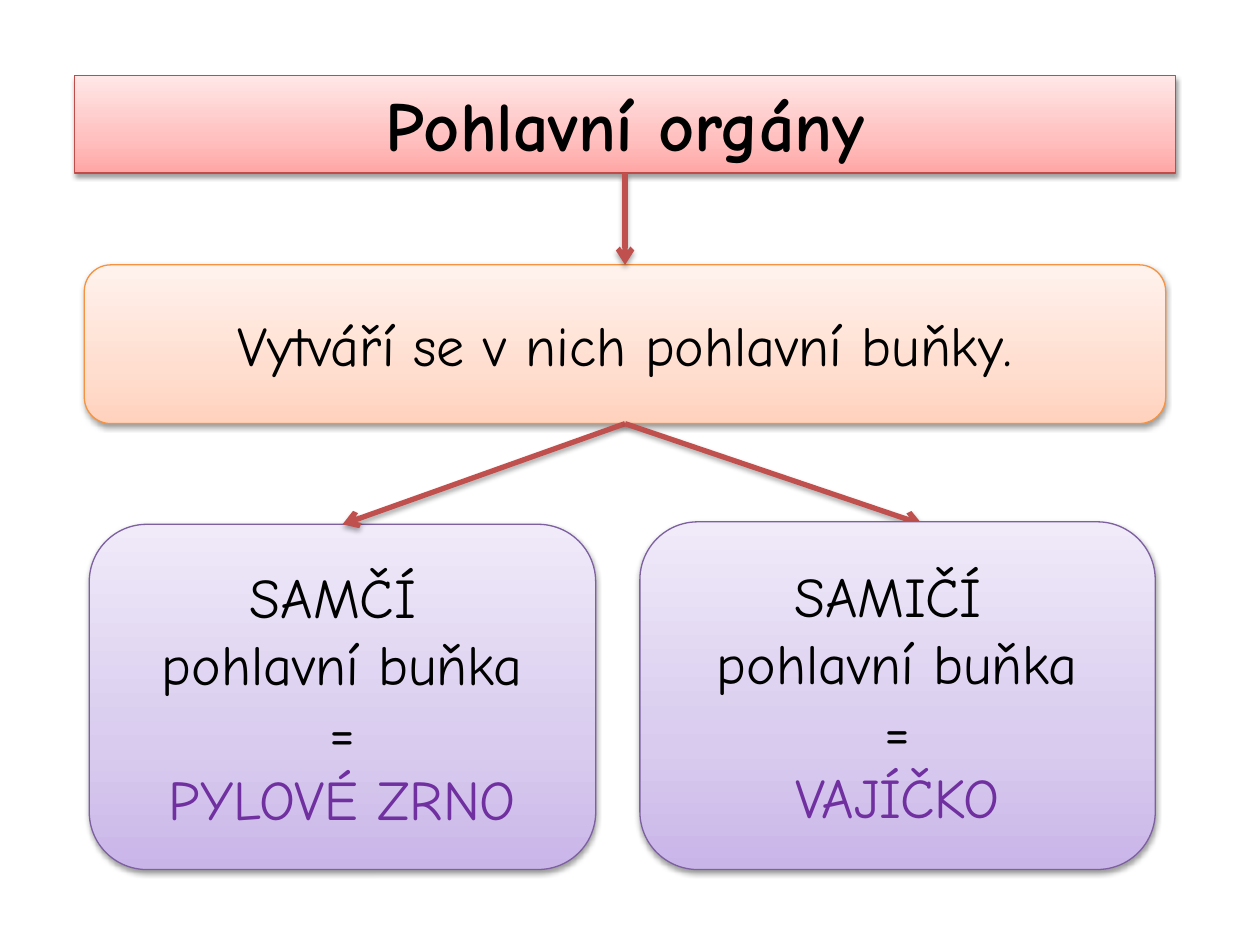
import copy

import pptx
import pptx.dml.color
import pptx.enum.shapes
import pptx.enum.text
import pptx.oxml
import pptx.oxml.ns
import pptx.util
from pptx.util import Cm

SHAPES = pptx.enum.shapes.MSO_SHAPE
ANCHORS = pptx.enum.text.MSO_ANCHOR
FONT = "Comic Neue"
BLACK, VIOLET, ARROW_RED = "000000", "7030A0", "C0504D"
TOP, BOTTOM = 0, 2

# Gradient colours run from the bottom edge to the top edge
STOP_POSITIONS = (0, 0.35, 1)
RED = {"stops": ("FFA6A5", "FFC0BF", "FFE7E7"), "line": "BF4C48"}
ORANGE = {"stops": ("FFD2BD", "FFDED0", "FFF2ED"), "line": "F69240"}
PURPLE = {"stops": ("C9B5E8", "D8CBEE", "F0EAF9"), "line": "7D60A0"}


def rgb(value):
    return pptx.dml.color.RGBColor.from_string(value)


def set_attributes(target, values):
    for name, value in values.items():
        setattr(target, name, value)


def add_shadow(shape, distance, opacity):
    """Add a soft shadow straight below; distance in points, opacity in percent."""
    shape._element.spPr.append(pptx.oxml.parse_xml(
        f'<a:effectLst {pptx.oxml.ns.nsdecls("a")}>'
        f'<a:outerShdw blurRad="{pptx.util.Pt(3.1)}" dist="{pptx.util.Pt(distance)}"'
        ' dir="5400000" rotWithShape="0">'
        f'<a:srgbClr val="000000"><a:alpha val="{opacity * 1000}"/></a:srgbClr>'
        '</a:outerShdw></a:effectLst>'))


def fill_gradient(shape, colors):
    shape.fill.gradient()
    shape.fill.gradient_angle = 90
    stop_list = shape._element.spPr.find(".//" + pptx.oxml.ns.qn("a:gsLst"))
    stop_list.append(copy.deepcopy(stop_list[0]))
    for stop, position, color in zip(shape.fill.gradient_stops, STOP_POSITIONS, colors):
        stop.position = position
        stop.color.rgb = rgb(color)


def add_box(slide, kind, bounds, theme, lines, font, frame):
    """Add a gradient box; lines is a list of (text, colour)."""
    shape = slide.shapes.add_shape(kind, *map(Cm, bounds))
    fill_gradient(shape, theme["stops"])
    shape.line.color.rgb = rgb(theme["line"])
    shape.line.width = pptx.util.Pt(0.75)
    add_shadow(shape, 1.6, 38)

    text_frame = shape.text_frame
    set_attributes(text_frame, {"word_wrap": True, **frame})
    for index, (text, color) in enumerate(lines):
        paragraph = text_frame.add_paragraph() if index else text_frame.paragraphs[0]
        paragraph.alignment = pptx.enum.text.PP_ALIGN.CENTER
        run = paragraph.add_run()
        run.text = text
        set_attributes(run.font, {"name": FONT, **font})
        run.font.color.rgb = rgb(color)
    return shape


def add_arrow(slide, source, target=None, end=(0, 0)):
    """Draw an arrow from below source to the top of target, or to a free end."""
    arrow = slide.shapes.add_connector(
        pptx.enum.shapes.MSO_CONNECTOR.STRAIGHT, 0, 0, *map(Cm, end))
    arrow.begin_connect(source, BOTTOM)
    if target is not None:
        arrow.end_connect(target, TOP)
    arrow.line.color.rgb = rgb(ARROW_RED)
    arrow.line.width = pptx.util.Pt(3)
    arrow.line._get_or_add_ln().append(pptx.oxml.parse_xml(
        f'<a:tailEnd {pptx.oxml.ns.nsdecls("a")} type="arrow"/>'))
    add_shadow(arrow, 1.8, 35)


def cell_lines(kind, name):
    return [(kind + " ", BLACK), ("pohlavní buňka", BLACK), ("=", BLACK), (name, VIOLET)]


def main():
    presentation = pptx.Presentation()
    set_attributes(presentation, {"slide_width": Cm(25.4), "slide_height": Cm(19.05)})
    slide = presentation.slides.add_slide(presentation.slide_layouts[6])

    title_font = {"size": pptx.util.Pt(40), "bold": True}
    body_font = {"size": pptx.util.Pt(32), "bold": False}
    title_frame = {"vertical_anchor": ANCHORS.TOP,
                   "auto_size": pptx.enum.text.MSO_AUTO_SIZE.SHAPE_TO_FIT_TEXT}
    body_frame = {"vertical_anchor": ANCHORS.MIDDLE}

    # Title and explanation
    title = add_box(slide, SHAPES.RECTANGLE, (1.5, 1.52, 22.2, 1.97), RED,
                    [("Pohlavní orgány", BLACK)], title_font, title_frame)
    explanation = add_box(slide, SHAPES.ROUNDED_RECTANGLE, (1.7, 5.34, 21.8, 3.2), ORANGE,
                          [("Vytváří se v nich pohlavní buňky.", BLACK)],
                          body_font, body_frame)
    add_arrow(slide, title, explanation)

    # Male and female cells, with the arrows leading to them
    male = add_box(slide, SHAPES.ROUNDED_RECTANGLE, (1.8, 10.57, 10.21, 6.96), PURPLE,
                   cell_lines("SAMČÍ", "PYLOVÉ ZRNO"), body_font, body_frame)
    add_arrow(slide, explanation, male)
    add_arrow(slide, explanation, end=(18.59, 10.57))
    add_box(slide, SHAPES.ROUNDED_RECTANGLE, (12.9, 10.52, 10.39, 7.01), PURPLE,
            cell_lines("SAMIČÍ", "VAJÍČKO"), body_font, body_frame)

    presentation.save("out.pptx")


if __name__ == "__main__":
    main()
